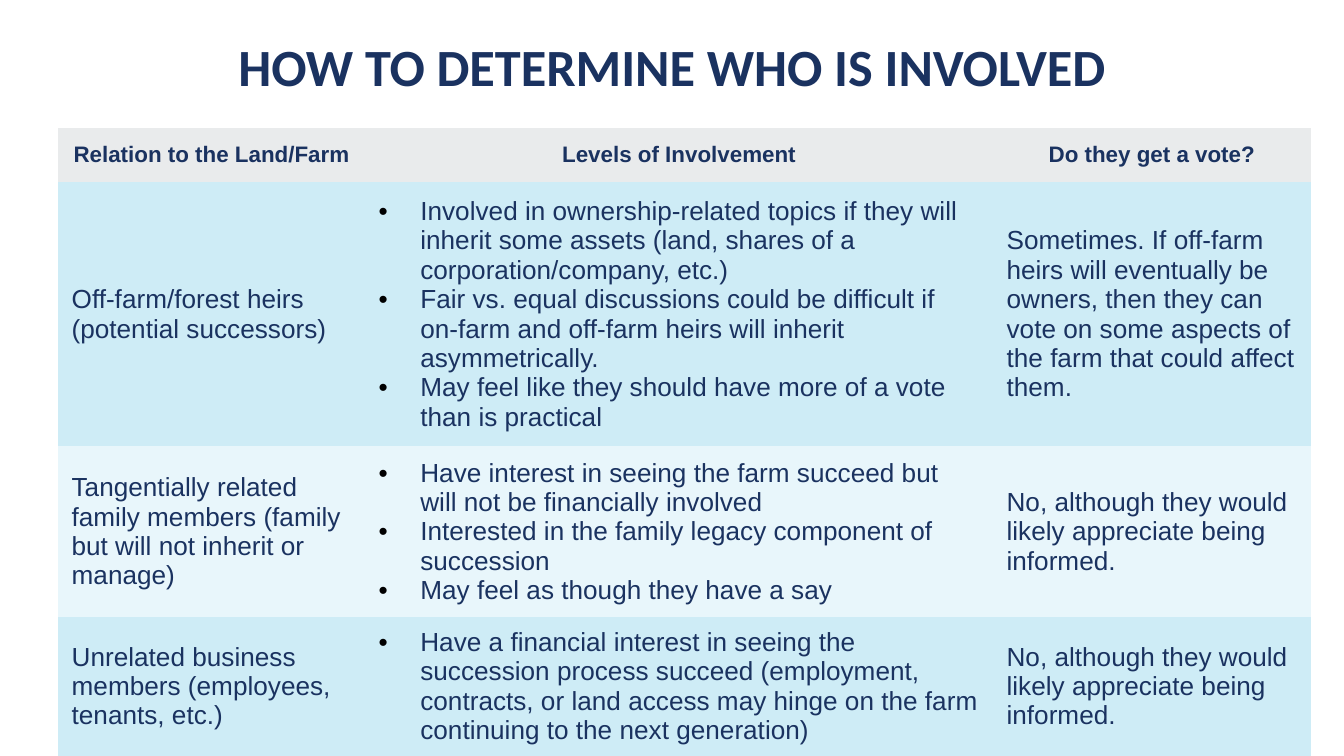
from lxml.etree import SubElement
from pptx import Presentation
from pptx.dml.color import RGBColor
from pptx.enum.text import MSO_ANCHOR, PP_ALIGN
from pptx.oxml.ns import qn
from pptx.util import Cm, Pt

COLOURS = {
    "navy": "1A3260",
    "header": "E9EBEC",
    "band_dark": "CEECF6",
    "band_light": "E8F6FB",
    "bullet": "000000",
}

COLUMN_WIDTHS = [5.8, 11.87, 6]
ROW_HEIGHT = 1.02  # least height; body rows grow with their text

HEADERS = ["Relation to the Land/Farm", "Levels of Involvement", "Do they get a vote?"]

# Each row: relation, list of involvement levels, vote
ROWS = [
    (
        "Off-farm/forest heirs (potential successors)",
        [
            "Involved in ownership-related topics if they will inherit some assets "
            "(land, shares of a corporation/company, etc.)",
            "Fair vs. equal discussions could be difficult if on-farm and off-farm "
            "heirs will inherit asymmetrically.",
            "May feel like they should have more of a vote than is practical",
        ],
        "Sometimes. If off-farm heirs will eventually be owners, then they can vote "
        "on some aspects of the farm that could affect them.",
    ),
    (
        "Tangentially related family members (family but will not inherit or manage)",
        [
            "Have interest in seeing the farm succeed but will not be financially involved",
            "Interested in the family legacy component of succession",
            "May feel as though they have a say",
        ],
        "No, although they would likely appreciate being informed.",
    ),
    (
        "Unrelated business members (employees, tenants, etc.)",
        [
            "Have a financial interest in seeing the succession process succeed "
            "(employment, contracts, or land access may hinge on the farm continuing "
            "to the next generation)",
        ],
        "No, although they would likely appreciate being informed.",
    ),
]


def colour(name):
    return RGBColor.from_string(COLOURS[name])


def add_span(para, text, size, font="Arial", bold=False):
    span = para.add_run()
    span.text = text
    span.font.name = font
    span.font.size = Pt(size)
    span.font.bold = bold
    span.font.color.rgb = colour("navy")


def add_bullet(para):
    properties = para._p.get_or_add_pPr()
    indent = Cm(0.79)
    properties.set("marL", str(indent))
    properties.set("indent", str(-indent))
    bullet_colour = SubElement(properties, qn("a:buClr"))
    SubElement(bullet_colour, qn("a:srgbClr"), val=COLOURS["bullet"])
    SubElement(properties, qn("a:buFont"), typeface="Arial")
    SubElement(properties, qn("a:buChar"), char="•")


def add_title(page, text):
    box = page.shapes.add_textbox(Cm(0.86), Cm(0.39), Cm(23.67), Cm(2))
    frame = box.text_frame
    frame.word_wrap = True
    frame.margin_left = frame.margin_right = Cm(0.25)
    frame.margin_top = frame.margin_bottom = Cm(0.25)
    para = frame.paragraphs[0]
    para.alignment = PP_ALIGN.CENTER
    add_span(para, text, 28, font="Calibri", bold=True)


def style_cell(cell, fill):
    properties = cell._tc.get_or_add_tcPr()
    for side in ("lnL", "lnR", "lnT", "lnB"):
        border = SubElement(properties, qn(f"a:{side}"), w="0")
        SubElement(border, qn("a:noFill"))
    cell.fill.solid()
    cell.fill.fore_color.rgb = colour(fill)
    cell.vertical_anchor = MSO_ANCHOR.MIDDLE


def fill_cell(cell, content, fill, header=False):
    style_cell(cell, fill)
    bulleted = isinstance(content, list)
    for index, text in enumerate(content if bulleted else [content]):
        frame = cell.text_frame
        para = frame.add_paragraph() if index else frame.paragraphs[0]
        if bulleted:
            add_bullet(para)
        para.alignment = PP_ALIGN.CENTER if header else PP_ALIGN.LEFT
        add_span(para, text, 12 if header else 14, bold=header)


def add_involvement_table(page):
    row_count = len(ROWS) + 1
    table = page.shapes.add_table(
        row_count, len(COLUMN_WIDTHS), Cm(1.1), Cm(2.42),
        Cm(sum(COLUMN_WIDTHS)), Cm(row_count * ROW_HEIGHT),
    ).table
    for column, width in zip(table.columns, COLUMN_WIDTHS):
        column.width = Cm(width)
    for row in table.rows:
        row.height = Cm(ROW_HEIGHT)

    # Header row
    for cell, text in zip(table.rows[0].cells, HEADERS):
        fill_cell(cell, text, "header", header=True)

    # Banded body rows
    for number, contents in enumerate(ROWS, start=1):
        fill = "band_dark" if number % 2 else "band_light"
        for cell, content in zip(table.rows[number].cells, contents):
            fill_cell(cell, content, fill)


def main():
    deck = Presentation()
    deck.slide_width, deck.slide_height = Cm(25.4), Cm(14.29)
    page = deck.slides.add_slide(deck.slide_layouts[6])
    add_title(page, "HOW TO DETERMINE WHO IS INVOLVED")
    add_involvement_table(page)
    deck.save("out.pptx")


if __name__ == "__main__":
    main()
